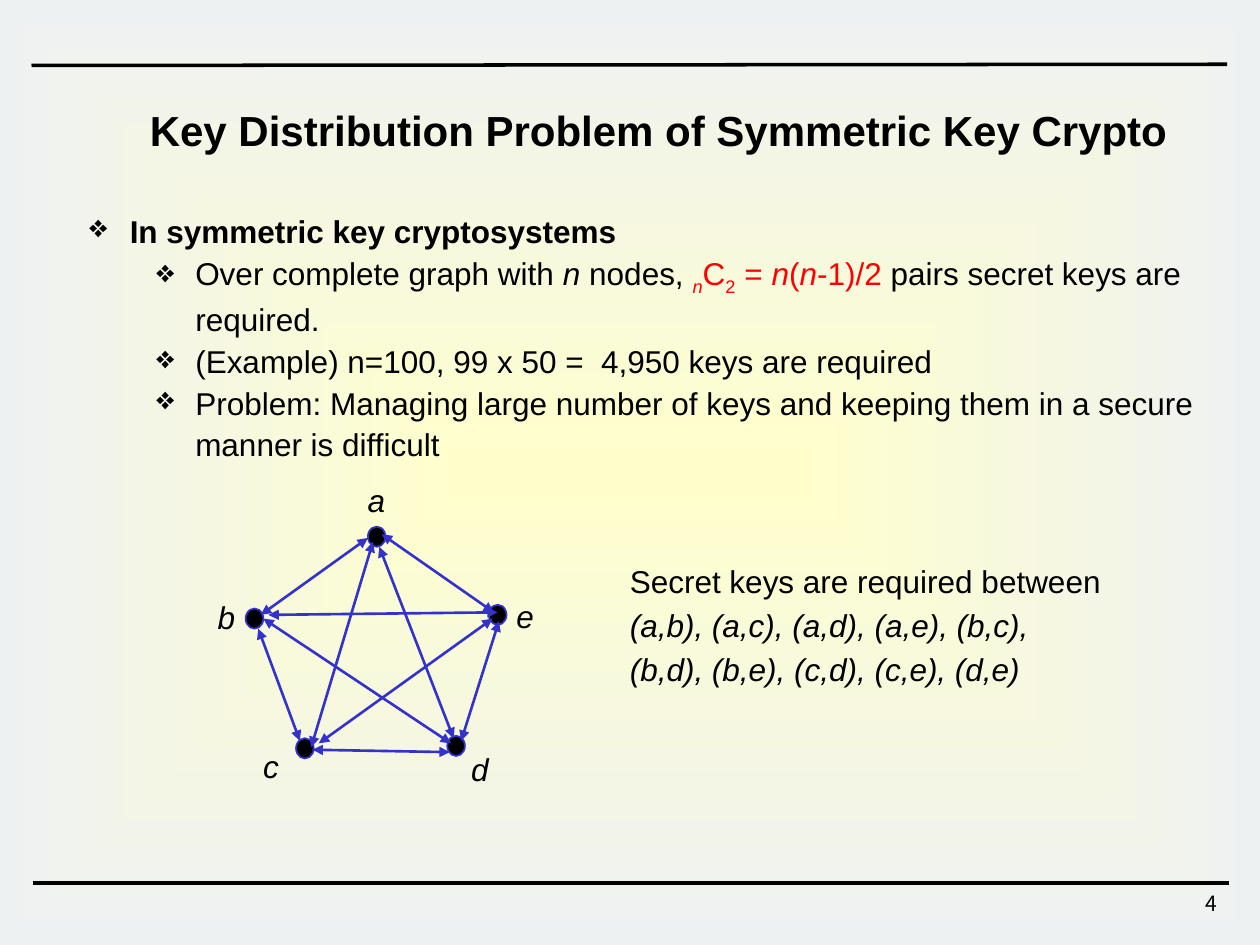
import pptx
import pptx.dml.color
import pptx.enum.shapes
import pptx.enum.text
import pptx.oxml
import pptx.oxml.ns
import pptx.util
from lxml import etree

Inches, Pt = pptx.util.Inches, pptx.util.Pt
qn = pptx.oxml.ns.qn
SHAPES = pptx.enum.shapes.MSO_SHAPE
STRAIGHT = pptx.enum.shapes.MSO_CONNECTOR.STRAIGHT

COLORS = {"text": "000000", "formula": "FF0000", "graph": "3333CC",
          "center": "FFFFCC", "edge": "EEF1F2"}
FONT = "Arial"
BODY_SIZE = 18

TITLE = "Key Distribution Problem of Symmetric Key Crypto"
PAGE_NUMBER = "4"
RULES = [((0.25, 0.52), (9.74, 0.51)), ((0.26, 7.01), (9.75, 7.01))]

# Run styles: b bold, i italic, r red, s subscript
BULLETS = [
    (0, [("In symmetric key cryptosystems", "b")]),
    (1, [("Over complete graph with ", ""), ("n", "i"), (" nodes, ", ""),
         ("n", "irs"), ("C", "r"), ("2", "rs"), (" = ", "r"), ("n", "ir"),
         ("(", "r"), ("n", "ir"), ("-1)/2", "r"),
         (" pairs secret keys are required.", "")]),
    (1, [("(Example) n=100, 99 x 50 =  4,950 keys are required", "")]),
    (1, [("Problem: Managing large number of keys and keeping them "
          "in a secure manner is difficult", "")]),
]
BULLET_INDENTS = [(0.32, -0.32), (0.84, -0.31)]

KEY_PAIRS = [
    [("Secret keys are required between", "")],
    [("(a,b), (a,c), (a,d), (a,e), (b,c),", "i")],
    [("(b,d), (b,e), (c,d), (c,e), (d,e)", "i")],
]

# Node: (dot corner, label corner)
NODES = {
    "a": ((2.92, 4.18), (2.82, 3.77)),
    "b": ((1.95, 4.83), (1.63, 4.70)),
    "c": ((2.35, 5.86), (1.99, 5.88)),
    "d": ((3.55, 5.84), (3.64, 5.90)),
    "e": ((3.88, 4.80), (4.00, 4.69)),
}
DOT_SIZE = (0.14, 0.16)
LABEL_SIZE = (0.34, 0.40)
EDGES = [
    ((2.07, 4.88), (2.92, 4.27)),  # b-a
    ((3.66, 5.88), (3.96, 4.93)),  # d-e
    ((2.48, 5.95), (3.57, 5.97)),  # c-d
    ((3.92, 4.86), (3.03, 4.24)),  # e-a
    ((2.38, 5.88), (2.05, 4.99)),  # c-b
    ((2.13, 4.88), (3.95, 4.86)),  # b-e
    ((2.47, 5.93), (2.96, 4.30)),  # c-a
    ((3.60, 5.86), (3.01, 4.34)),  # d-a
    ((2.53, 5.90), (3.91, 4.91)),  # c-e
    ((3.58, 5.90), (2.09, 4.91)),  # d-b
]


def rgb(name):
    return pptx.dml.color.RGBColor.from_string(COLORS[name])


def add_background(slide, width, height):
    panel = slide.shapes.add_shape(SHAPES.RECTANGLE, 0, 0, width, height)
    panel.shadow.inherit = False
    panel.line.fill.background()
    panel.fill.gradient()
    for stop, name, position in zip(panel.fill.gradient_stops, ("center", "edge"), (0, 1)):
        stop.color.rgb = rgb(name)
        stop.position = position
    gradient = panel._element.spPr.find(qn("a:gradFill"))
    linear = gradient.find(qn("a:lin"))
    radial = etree.Element(qn("a:path"), path="shape")
    etree.SubElement(radial, qn("a:fillToRect"),
                     {side: "50000" for side in "ltrb"})
    gradient.replace(linear, radial)


def add_line(slide, start, end, color, width, arrows=False):
    line = slide.shapes.add_connector(STRAIGHT, *map(Inches, start + end))
    line.line.color.rgb = rgb(color)
    line.line.width = Pt(width)
    if arrows:
        for tag in ("a:headEnd", "a:tailEnd"):
            etree.SubElement(line.line._get_or_add_ln(), qn(tag), type="triangle")
    etree.SubElement(line._element.spPr, qn("a:effectLst"))


def add_dot(slide, corner):
    dot = slide.shapes.add_shape(SHAPES.FLOWCHART_CONNECTOR,
                                 *map(Inches, corner + DOT_SIZE))
    dot.shadow.inherit = False
    dot.fill.solid()
    dot.fill.fore_color.rgb = rgb("text")
    dot.line.color.rgb = rgb("graph")
    dot.line.width = Pt(1)


def add_text(slide, box, paragraphs, size=BODY_SIZE, font=FONT, wrap=False, space_before=0):
    """Add a text box from paragraphs of (text, style) runs; return its frame."""
    frame = slide.shapes.add_textbox(*map(Inches, box)).text_frame
    frame.word_wrap = wrap
    for index, runs in enumerate(paragraphs):
        paragraph = frame.add_paragraph() if index else frame.paragraphs[0]
        paragraph.space_before = Pt(space_before)
        for text, style in runs:
            run = paragraph.add_run()
            run.text = text
            run.font.name = font
            run.font.size = Pt(size)
            run.font.bold = "b" in style
            run.font.italic = "i" in style
            run.font.color.rgb = rgb("formula" if "r" in style else "text")
            if "s" in style:
                run.font._element.set("baseline", "-25000")
    return frame


def add_bullets(slide):
    frame = add_text(slide, (0.71, 1.65, 8.78, 2), [runs for _, runs in BULLETS], wrap=True)
    frame.margin_left = frame.margin_right = frame.margin_top = frame.margin_bottom = 0
    for paragraph, (level, _) in zip(frame.paragraphs, BULLETS):
        paragraph.level = level
        paragraph.line_spacing = 1.1
        margin, indent = BULLET_INDENTS[level]
        properties = paragraph._p.get_or_add_pPr()
        properties.set("marL", str(Inches(margin)))
        properties.set("indent", str(Inches(indent)))
        etree.SubElement(properties, qn("a:buChar"), char="❖")


def main():
    deck = pptx.Presentation()
    deck.slide_width, deck.slide_height = Inches(10), Inches(7.5)
    slide = deck.slides.add_slide(deck.slide_layouts[6])

    add_background(slide, deck.slide_width, deck.slide_height)
    for start, end in RULES:
        add_line(slide, start, end, "text", 2)
    number = add_text(slide, (7.68, 7.02, 2.08, 0.33), [[(PAGE_NUMBER, "")]],
                      size=12, font="Noto Sans CJK KR", wrap=True)
    number.paragraphs[0].alignment = pptx.enum.text.PP_ALIGN.RIGHT
    add_text(slide, (1.09, 0.78, 8.28, 0.5), [[(TITLE, "b")]], size=24)
    add_bullets(slide)

    for dot_corner, _ in NODES.values():
        add_dot(slide, dot_corner)
    for start, end in EDGES:
        add_line(slide, start, end, "graph", 1.5, arrows=True)
    for name, (_, label_corner) in NODES.items():
        add_text(slide, label_corner + LABEL_SIZE, [[(name, "i")]], space_before=3.6)
    add_text(slide, (4.9, 4.41, 3.98, 1.13), KEY_PAIRS, space_before=3.6)

    deck.save("out.pptx")


if __name__ == "__main__":
    main()
